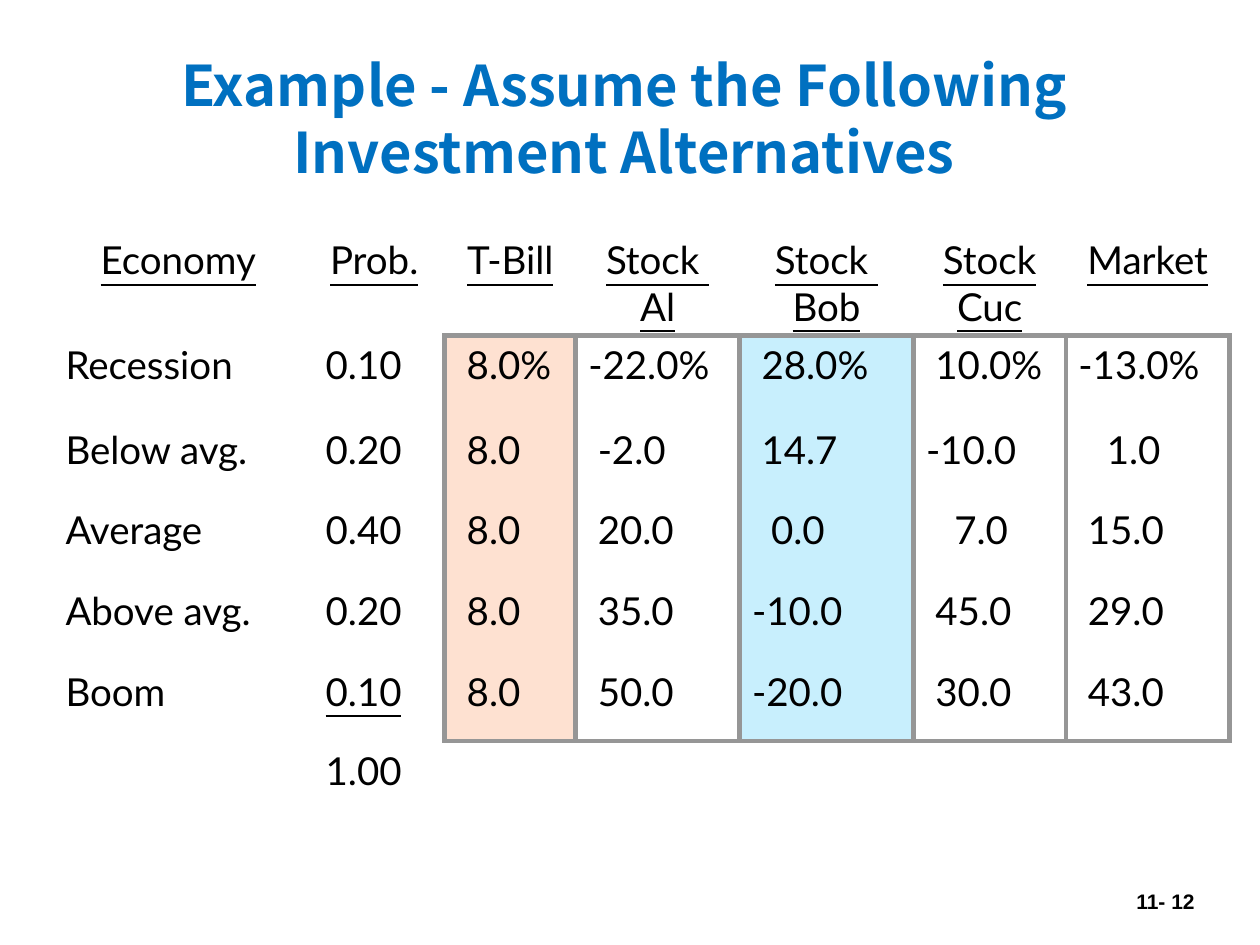
from dataclasses import dataclass
from itertools import product

from lxml.etree import SubElement
from pptx import Presentation
from pptx.dml.color import RGBColor
from pptx.enum.text import MSO_ANCHOR, MSO_AUTO_SIZE, PP_ALIGN as Align
from pptx.oxml.ns import qn
from pptx.util import Inches, Pt


@dataclass(frozen=True)
class Theme:
    title_color: str = "0070C0"
    ink: str = "000000"
    rule: str = "969696"
    tbill_fill: str = "FEE1D1"
    bob_fill: str = "C8EFFD"
    plain_fill: str = "FFFFFF"
    title_font: str = "Noto Sans CJK SC"
    table_font: str = "Lato"
    number_font: str = "Arial"
    title_size: int = 32
    title_leading: float = 38.4
    table_size: int = 22
    number_size: int = 12
    rule_width: int = 3


@dataclass(frozen=True)
class Column:
    heading: tuple[str, ...]
    width: float
    values: tuple[str, ...]
    indents: tuple[int, ...]
    fill: str | None = None


THEME = Theme()
INDENT = 0.075
CELL_MARGIN = 0.1
ROW_HEIGHTS = (0.75, 0.67, 0.64, 0.64, 0.64, 0.63, 0.64)
FIRST_BOXED_ROW, LAST_BOXED_ROW = 1, 5
COLUMNS = (
    Column(("Economy",), 1.99,
           ("Recession", "Below avg.", "Average", "Above avg.", "Boom"), (0,) * 5),
    Column(("Prob.",), 1.12,
           ("0.10", "0.20", "0.40", "0.20", "0.10", "1.00"), (1,) * 6),
    Column(("T-Bill",), 1.04,
           ("8.0%", "8.0", "8.0", "8.0", "8.0"), (1,) * 5, THEME.tbill_fill),
    Column(("Stock ", "Al"), 1.3,
           ("-22.0%", "-2.0", "20.0", "35.0", "50.0"), (0, 1, 1, 1, 1), THEME.plain_fill),
    Column(("Stock ", "Bob"), 1.38,
           ("28.0%", "14.7", "0.0", "-10.0", "-20.0"), (1, 1, 2, 0, 0), THEME.bob_fill),
    Column(("Stock Cuc",), 1.21,
           ("10.0%", "-10.0", "7.0", "45.0", "30.0"), (1, 0, 3, 1, 1), THEME.plain_fill),
    Column(("Market",), 1.3,
           ("-13.0%", "1.0", "15.0", "29.0", "43.0"), (0, 3, 1, 1, 1), THEME.plain_fill),
)


def add_run(paragraph, text: str, font: str, size: int, color: str,
            bold: bool = False, underline: bool = False) -> None:
    run = paragraph.add_run()
    run.text = text
    run.font.name = font
    run.font.size = Pt(size)
    run.font.color.rgb = RGBColor.from_string(color)
    run.font.bold = bold
    run.font.underline = underline


def write_cell(cell, lines: tuple[str, ...], align: Align, underline: bool) -> None:
    for index, line in enumerate(lines):
        frame = cell.text_frame
        paragraph = frame.add_paragraph() if index else frame.paragraphs[0]
        paragraph.alignment = align
        add_run(paragraph, line, THEME.table_font, THEME.table_size, THEME.ink,
                underline=underline)


def is_boxed(row: int, col: int) -> bool:
    return (FIRST_BOXED_ROW <= row <= LAST_BOXED_ROW
            and 0 <= col < len(COLUMNS) and COLUMNS[col].fill is not None)


def set_borders(cell, row: int, col: int) -> None:
    here = is_boxed(row, col)
    edges = {
        "a:lnL": here or is_boxed(row, col - 1),
        "a:lnR": here or is_boxed(row, col + 1),
        "a:lnT": here != is_boxed(row - 1, col),
        "a:lnB": here != is_boxed(row + 1, col),
    }
    properties = cell._tc.get_or_add_tcPr()
    for tag, ruled in edges.items():
        line = SubElement(properties, qn(tag), w=str(Pt(THEME.rule_width)))
        if ruled:
            solid = SubElement(line, qn("a:solidFill"))
            SubElement(solid, qn("a:srgbClr"), val=THEME.rule)
        else:
            SubElement(line, qn("a:noFill"))


def fill_cell(cell, color: str | None) -> None:
    if color is None:
        cell.fill.background()
    else:
        cell.fill.solid()
        cell.fill.fore_color.rgb = RGBColor.from_string(color)


def add_title(slide) -> None:
    title = slide.shapes.title
    title.left, title.top = Inches(0.33), Inches(0.33)
    title.width, title.height = Inches(9.25), Inches(1.21)
    frame = title.text_frame
    frame.auto_size = MSO_AUTO_SIZE.NONE
    frame.vertical_anchor = MSO_ANCHOR.MIDDLE
    paragraph = frame.paragraphs[0]
    paragraph.alignment = Align.CENTER
    paragraph.line_spacing = Pt(THEME.title_leading)
    add_run(paragraph, "Example - Assume the Following Investment Alternatives",
            THEME.title_font, THEME.title_size, THEME.title_color, bold=True)


def add_returns_table(slide) -> None:
    returns = slide.shapes.add_table(
        len(ROW_HEIGHTS), len(COLUMNS), Inches(0.42), Inches(1.83),
        Inches(sum(column.width for column in COLUMNS)), Inches(sum(ROW_HEIGHTS))).table
    returns.first_row = returns.horz_banding = False
    for row, height in zip(returns.rows, ROW_HEIGHTS):
        row.height = Inches(height)
    for table_column, column in zip(returns.columns, COLUMNS):
        table_column.width = Inches(column.width)

    for row, col in product(range(len(ROW_HEIGHTS)), range(len(COLUMNS))):
        column, cell = COLUMNS[col], returns.cell(row, col)
        set_borders(cell, row, col)
        fill_cell(cell, column.fill if is_boxed(row, col) else None)
        if row == 0:
            write_cell(cell, column.heading, Align.CENTER, underline=True)
        elif row <= len(column.values):
            cell.margin_left = Inches(CELL_MARGIN + INDENT * column.indents[row - 1])
            last_addend = column.heading == ("Prob.",) and row == LAST_BOXED_ROW
            write_cell(cell, (column.values[row - 1],), Align.LEFT, underline=last_addend)


def add_slide_number(slide) -> None:
    frame = slide.shapes.add_textbox(
        Inches(8.92), Inches(7), Inches(0.68), Inches(0.3)).text_frame
    frame.word_wrap = False
    add_run(frame.paragraphs[0], "11- 12", THEME.number_font, THEME.number_size,
            THEME.ink, bold=True)


def main() -> None:
    deck = Presentation()
    deck.slide_width, deck.slide_height = Inches(10), Inches(7.5)
    slide = deck.slides.add_slide(deck.slide_layouts[5])
    add_slide_number(slide)
    add_title(slide)
    add_returns_table(slide)
    deck.save("out.pptx")


if __name__ == "__main__":
    main()
